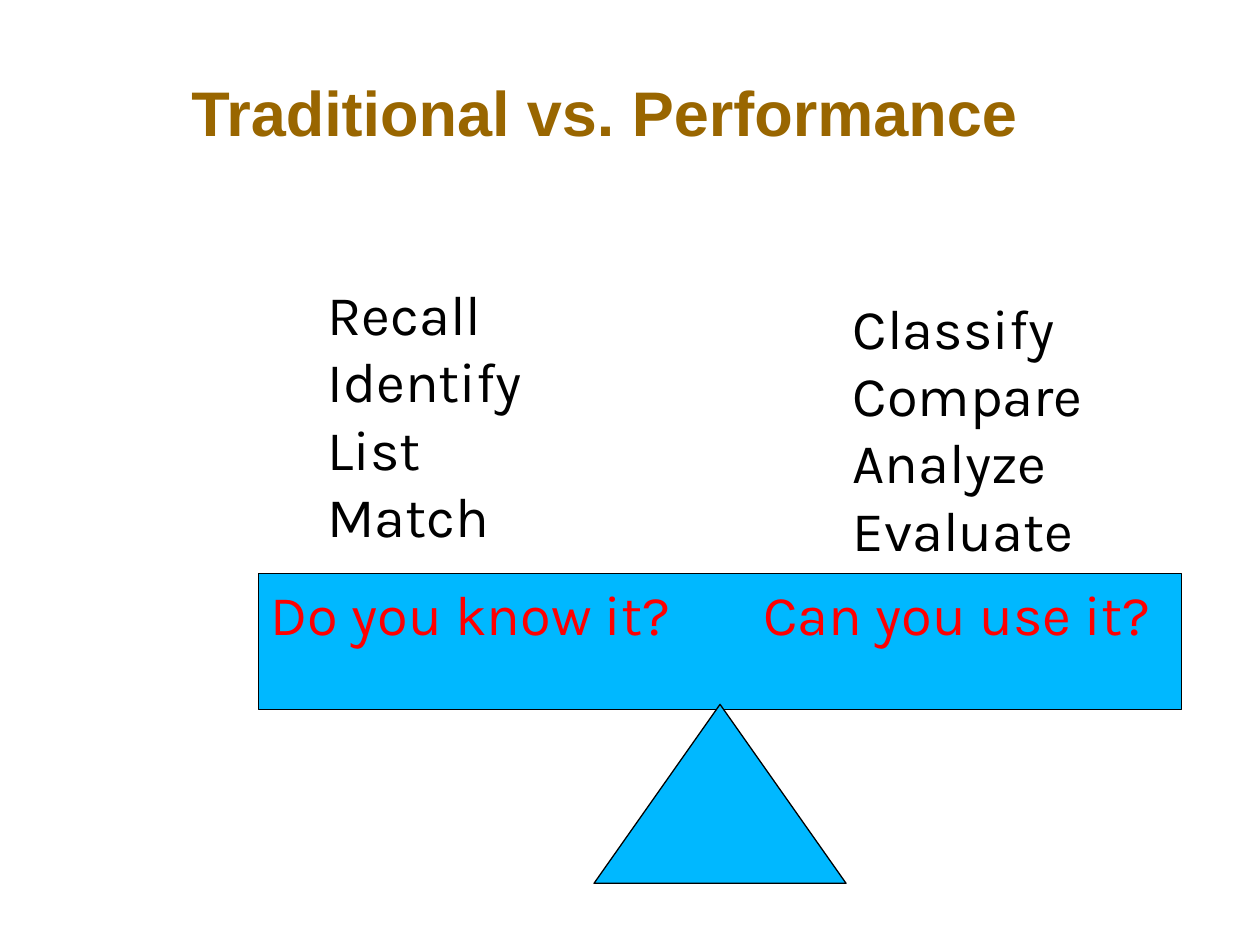
from lxml.etree import SubElement
from pptx import Presentation
from pptx.dml.color import RGBColor
from pptx.enum.shapes import MSO_SHAPE
from pptx.enum.text import MSO_ANCHOR, PP_ALIGN
from pptx.oxml.ns import qn
from pptx.util import Inches, Pt

BROWN = RGBColor(0x99, 0x66, 0x00)
BLUE = RGBColor(0x00, 0xB8, 0xFF)
RED = RGBColor(0xFF, 0x00, 0x00)
BLACK = RGBColor(0x00, 0x00, 0x00)


def write_text(sp, text, font="Karla", size=32, color=BLACK, bold=False,
               anchor=MSO_ANCHOR.TOP, spacing=None, tabs=()):
    tf = sp.text_frame
    tf.word_wrap = True
    tf.vertical_anchor = anchor
    for i, line in enumerate(text.split("\n")):
        p = tf.paragraphs[0] if i == 0 else tf.add_paragraph()
        p.alignment = PP_ALIGN.LEFT
        if spacing:
            p.line_spacing = spacing
        if tabs:
            stops = SubElement(p._p.get_or_add_pPr(), qn("a:tabLst"))
            for pos in tabs:
                SubElement(stops, qn("a:tab"), pos=str(Inches(pos)), algn="l")
        r = p.add_run()
        r.text = line
        r.font.name = font
        r.font.size = Pt(size)
        r.font.bold = bold
        r.font.color.rgb = color


def add_text(s, box, text, **fmt):
    sp = s.shapes.add_textbox(*map(Inches, box))
    write_text(sp, text, **fmt)


def add_block(s, kind, box):
    sp = s.shapes.add_shape(kind, *map(Inches, box))
    sp.shadow.inherit = False
    sp.fill.solid()
    sp.fill.fore_color.rgb = BLUE
    sp.line.color.rgb = BLACK
    sp.line.width = Pt(0.75)
    return sp


def add_seesaw(s, left, top, width, height):
    beam_h, base_w, base_top = 1.08, 2, 1.04
    beam = add_block(s, MSO_SHAPE.RECTANGLE, (left, top, width, beam_h))
    write_text(beam, "Do you know it?\t\tCan you use it?", color=RED,
               tabs=(3.5, 3.91))
    add_block(s, MSO_SHAPE.ISOSCELES_TRIANGLE,
              (left + (width - base_w) / 2, top + base_top,
               base_w, height - base_top))


def main():
    prs = Presentation()
    prs.slide_width, prs.slide_height = Inches(10), Inches(7.5)
    s = prs.slides.add_slide(prs.slide_layouts[6])
    add_text(s, (1.42, 0.21, 8.25, 1.42), "Traditional vs. Performance",
             font="Arial", size=36, color=BROWN, bold=True,
             anchor=MSO_ANCHOR.MIDDLE, spacing=0.9)
    add_seesaw(s, 2.05, 4.55, 7.33, 2.46)
    add_text(s, (2.5, 2.17, 2.58, 2.26), "Recall\nIdentify\nList\nMatch")
    add_text(s, (6.67, 2.28, 2.58, 2.26),
             "Classify\nCompare\nAnalyze\nEvaluate")
    prs.save("out.pptx")


if __name__ == "__main__":
    main()
